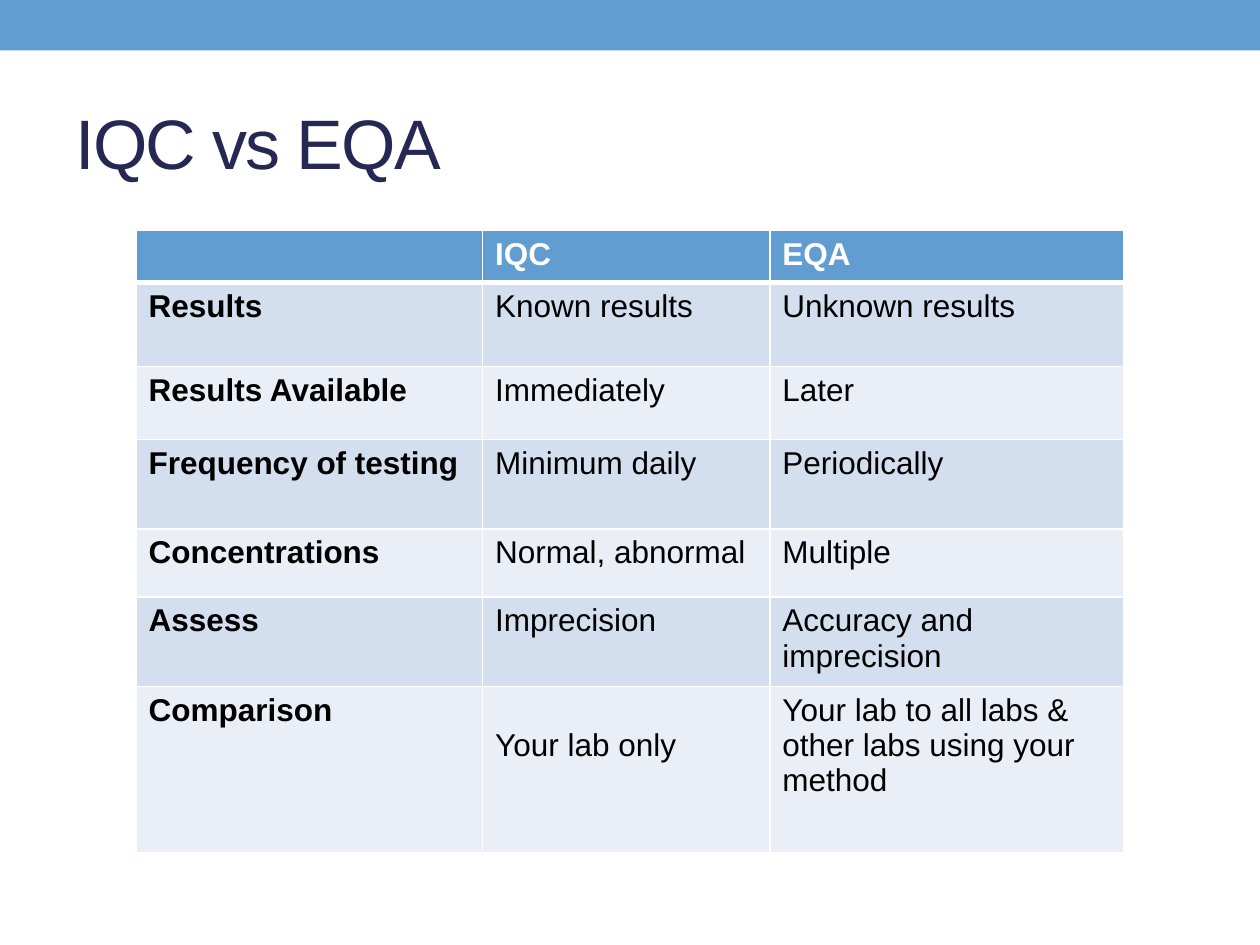
from lxml import etree
from pptx import Presentation
from pptx.dml.color import RGBColor
from pptx.enum.shapes import MSO_SHAPE
from pptx.enum.text import MSO_ANCHOR, PP_ALIGN
from pptx.oxml.ns import qn
from pptx.util import Inches, Pt

RECTANGLE = MSO_SHAPE.RECTANGLE
MIDDLE = MSO_ANCHOR.MIDDLE
LEFT = PP_ALIGN.LEFT
TITLE_ONLY = 5

THEME = {
    "accent": "629DD1", "title": "242852", "text": "000000", "white": "FFFFFF",
    "bands": ("D3DFEE", "EAEFF7"),
    "font": "Arial", "title_size": 40, "table_size": 18,
    "rule": 1, "header_rule": 3,
}

COLUMN_WIDTHS = (2.75, 2.28, 2.81)
COMPARISON = (
    (0.41, ("", "IQC", "EQA")),
    (0.67, ("Results", "Known results", "Unknown results")),
    (0.58, ("Results Available", "Immediately", "Later")),
    (0.71, ("Frequency of testing", "Minimum daily", "Periodically")),
    (0.54, ("Concentrations", "Normal, abnormal", "Multiple")),
    (0.71, ("Assess", "Imprecision", "Accuracy and imprecision")),
    (1.32, ("Comparison", "Your lab only",
            "Your lab to all labs & other labs using your method")),
)


def style_font(font, size, color, bold=False):
    formats = {"name": THEME["font"], "size": Pt(size), "bold": bold}
    for attribute, value in formats.items():
        setattr(font, attribute, value)
    font.color.rgb = RGBColor.from_string(color)


def add_borders(cell, widths):
    """Draw white cell borders; widths maps L, R, T and B to points."""
    properties = cell._tc.get_or_add_tcPr()
    for side, width in widths.items():
        line = etree.SubElement(properties, qn(f"a:ln{side}"), w=str(Pt(width)))
        fill = etree.SubElement(line, qn("a:solidFill"))
        etree.SubElement(fill, qn("a:srgbClr"), val=THEME["white"])


prs = Presentation()
prs.slide_width, prs.slide_height = Inches(10), Inches(7.5)
slide = prs.slides.add_slide(prs.slide_layouts[TITLE_ONLY])

top_band = slide.shapes.add_shape(RECTANGLE, 0, 0, prs.slide_width, Inches(0.4))
top_band.shadow.inherit = False
top_band.fill.solid()
top_band.fill.fore_color.rgb = RGBColor.from_string(THEME["accent"])
top_band.line.fill.background()

title = slide.shapes.title
title_box = {"left": 0.5, "top": 0.58, "width": 9, "height": 1.08}
for attribute, value in title_box.items():
    setattr(title, attribute, Inches(value))
title.text_frame.text = "IQC vs EQA"
title.text_frame.vertical_anchor = MIDDLE
heading = title.text_frame.paragraphs[0]
heading.alignment = LEFT
style_font(heading.runs[0].font, THEME["title_size"], THEME["title"])
heading.runs[0].font._element.set("spc", "-100")

table = slide.shapes.add_table(
    len(COMPARISON), len(COLUMN_WIDTHS), Inches(1.08), Inches(1.83),
    Inches(sum(COLUMN_WIDTHS)), Inches(sum(height for height, _ in COMPARISON)),
).table
for column, width in zip(table.columns, COLUMN_WIDTHS):
    column.width = Inches(width)

for row_index, (height, texts) in enumerate(COMPARISON):
    table.rows[row_index].height = Inches(height)
    is_header = row_index == 0
    background = THEME["accent"] if is_header else THEME["bands"][(row_index - 1) % 2]
    color = THEME["white"] if is_header else THEME["text"]
    borders = dict.fromkeys("LRTB", THEME["rule"])
    if row_index < 2:
        borders["B" if is_header else "T"] = THEME["header_rule"]
    for column_index, text in enumerate(texts):
        cell = table.cell(row_index, column_index)
        add_borders(cell, borders)
        cell.fill.solid()
        cell.fill.fore_color.rgb = RGBColor.from_string(background)
        cell.text = text
        style_font(cell.text_frame.paragraphs[0].font, THEME["table_size"], color)
        for run in cell.text_frame.paragraphs[0].runs:
            style_font(run.font, THEME["table_size"], color,
                       bold=is_header or column_index == 0)

# "Your lab only" sits one line lower than its neighbours
table.cell(len(COMPARISON) - 1, 1).margin_top = Inches(0.33)

prs.save("out.pptx")
